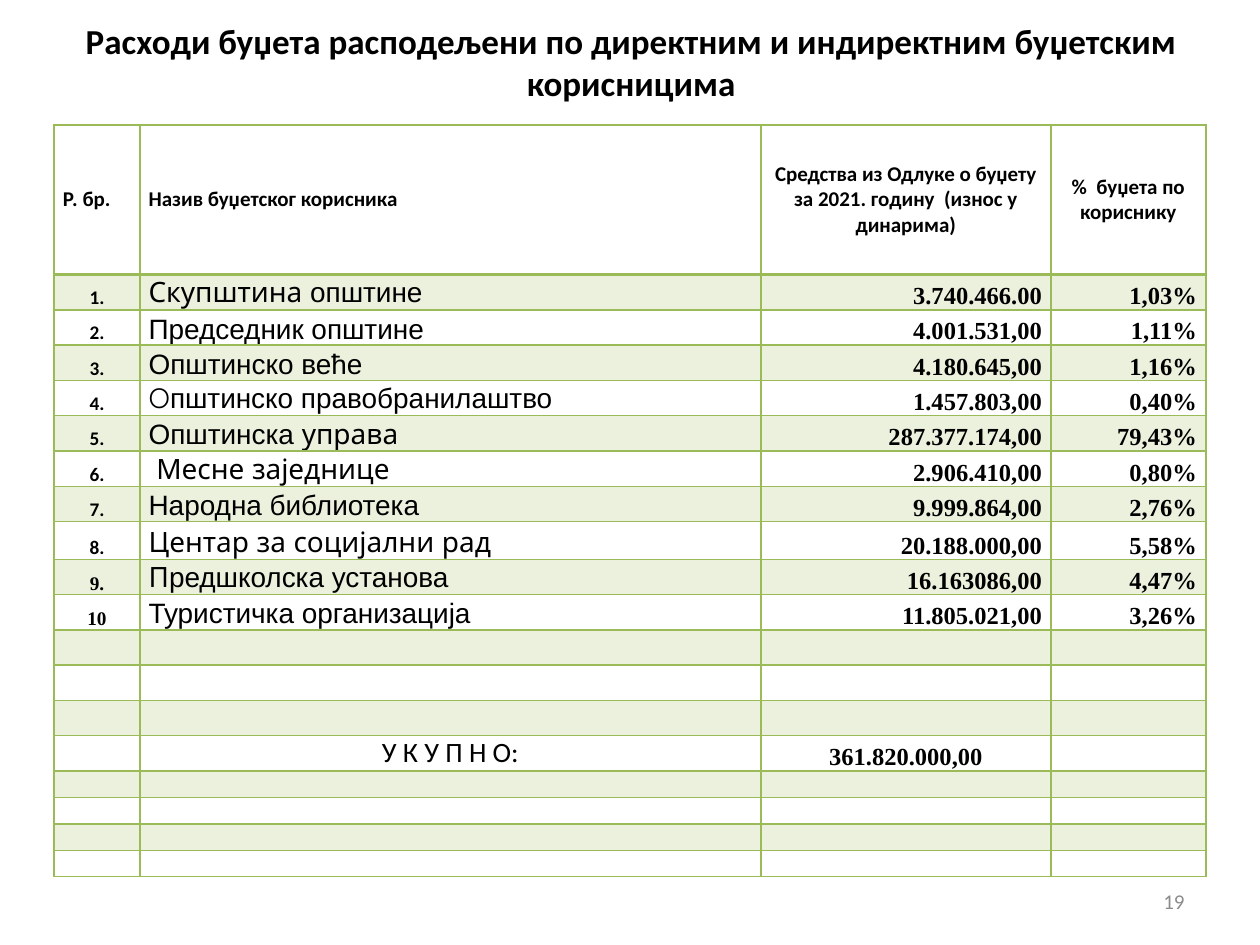
from dataclasses import dataclass

from lxml import etree
from pptx import Presentation
from pptx.dml.color import RGBColor
from pptx.enum.text import MSO_ANCHOR, PP_ALIGN
from pptx.oxml.ns import qn
from pptx.util import Inches, Pt

LEFT, CENTER, RIGHT = PP_ALIGN.LEFT, PP_ALIGN.CENTER, PP_ALIGN.RIGHT
TOP, MIDDLE, BOTTOM = MSO_ANCHOR.TOP, MSO_ANCHOR.MIDDLE, MSO_ANCHOR.BOTTOM

BLACK = RGBColor(0x00, 0x00, 0x00)
GRAY = RGBColor(0x8C, 0x8C, 0x8C)
GREEN = RGBColor(0x9B, 0xBB, 0x59)
BAND_ALPHA = "20000"

CALIBRI, ARIAL = "Calibri", "Arial"
QUICKSAND, TIMES = "Quicksand", "Times New Roman"


@dataclass
class Style:
    size: float
    font: str
    bold: bool = False
    align: int = LEFT
    anchor: int = BOTTOM
    color: RGBColor = BLACK


@dataclass
class User:
    number: str
    name: list  # (text, font) pairs
    amount: str
    share: str
    number_font: str = CALIBRI


HEADERS = [
    ("Р. бр.", LEFT),
    ("Назив буџетског корисника", LEFT),
    ("Средства из Одлуке о буџету за 2021. годину  (износ у динарима)", CENTER),
    ("%  буџета по кориснику", CENTER),
]
USERS = [
    User("1.", [("Скупштина ", QUICKSAND), ("општине", ARIAL)], "3.740.466.00", "1,03%"),
    User("2.", [("Председник општине", ARIAL)], "4.001.531,00", "1,11%"),
    User("3.", [("Општинско веће", ARIAL)], "4.180.645,00", "1,16%"),
    User("4.", [("O", QUICKSAND), ("пштинско правобранилаштво", ARIAL)],
         "1.457.803,00", "0,40%"),
    User("5.", [("Општинска ", ARIAL), ("управа", QUICKSAND)], "287.377.174,00", "79,43%"),
    User("6.", [(" ", ARIAL), ("Месне заједнице", QUICKSAND)], "2.906.410,00", "0,80%"),
    User("7.", [("Народна библиотека", ARIAL)], "9.999.864,00", "2,76%"),
    User("8.", [("Центар за социјални рад", QUICKSAND)], "20.188.000,00", "5,58%"),
    User("9.", [("П", QUICKSAND), ("редшколска установа", ARIAL)],
         "16.163086,00", "4,47%", TIMES),
    User("10", [("Туристичка организација", ARIAL)], "11.805.021,00", "3,26%", TIMES),
]
COL_WIDTHS = [0.68, 4.93, 2.3, 1.23]
ROW_HEIGHTS = [1.19] + [0.28] * 7 + [0.3] + [0.28] * 6 + [0.21] * 4
TOTAL_ROW = 14


def write(p, runs: list, style: Style) -> None:
    """Fill a paragraph with (text, font) runs in one style."""
    p.alignment = style.align
    for text, font in runs:
        r = p.add_run()
        r.text = text
        r.font.size = Pt(style.size)
        r.font.name = font
        r.font.bold = style.bold
        r.font.color.rgb = style.color


def add_text(slide, box: tuple, text: str, style: Style) -> None:
    sp = slide.shapes.add_textbox(*map(Inches, box))
    tf = sp.text_frame
    tf.word_wrap = True
    tf.vertical_anchor = style.anchor
    write(tf.paragraphs[0], [(text, style.font)], style)


def write_cell(cell, text: str, style: Style, runs: list = None) -> None:
    cell.vertical_anchor = style.anchor
    write(cell.text_frame.paragraphs[0], runs or [(text, style.font)], style)


def add_borders(cell, top: float, bottom: float) -> None:
    """Borders come before the fill in the cell properties."""
    props = cell._tc.get_or_add_tcPr()
    widths = {"a:lnL": 1, "a:lnR": 1, "a:lnT": top, "a:lnB": bottom}
    for i, (tag, width) in enumerate(widths.items()):
        ln = etree.Element(qn(tag), w=str(Pt(width)))
        fill = etree.SubElement(ln, qn("a:solidFill"))
        etree.SubElement(fill, qn("a:srgbClr"), val=str(GREEN))
        props.insert(i, ln)


def format_cell(cell, row: int) -> None:
    cell.margin_left = cell.margin_right = Inches(0.07)
    cell.margin_top = cell.margin_bottom = 0
    if row % 2:
        cell.fill.solid()
        cell.fill.fore_color.rgb = GREEN
        color = cell._tc.tcPr.find(".//" + qn("a:srgbClr"))
        etree.SubElement(color, qn("a:alpha"), val=BAND_ALPHA)
    else:
        cell.fill.background()
    add_borders(cell, 2 if row == 1 else 1, 2 if row == 0 else 1)
    if not cell.text_frame.text:
        # Small empty text keeps the row at its set height
        cell.text_frame.paragraphs[0]._p.get_or_add_endParaRPr().set("sz", "1000")


def add_budget_table(slide) -> None:
    frame = slide.shapes.add_table(
        len(ROW_HEIGHTS), len(COL_WIDTHS), Inches(0.43), Inches(0.99),
        Inches(sum(COL_WIDTHS)), Inches(sum(ROW_HEIGHTS)))
    table = frame.table
    for column, width in zip(table.columns, COL_WIDTHS):
        column.width = Inches(width)
    for row, height in zip(table.rows, ROW_HEIGHTS):
        row.height = Inches(height)
    table.first_row = table.horz_banding = False

    # Header
    for col, (text, align) in enumerate(HEADERS):
        write_cell(table.cell(0, col), text, Style(12, CALIBRI, True, align, MIDDLE))

    # Budget users
    name_style = Style(16, ARIAL)
    figure_style = Style(14, TIMES, True, RIGHT)
    for row, user in enumerate(USERS, start=1):
        number_style = Style(11, user.number_font, True, CENTER)
        write_cell(table.cell(row, 0), user.number, number_style)
        write_cell(table.cell(row, 1), "", name_style, user.name)
        write_cell(table.cell(row, 2), user.amount, figure_style)
        write_cell(table.cell(row, 3), user.share, figure_style)

    # Total
    write_cell(table.cell(TOTAL_ROW, 1), "У К У П Н О:",
               Style(16, CALIBRI, False, CENTER, TOP))
    write_cell(table.cell(TOTAL_ROW, 2), "361.820.000,00",
               Style(14, TIMES, True, CENTER))

    for row in range(len(ROW_HEIGHTS)):
        for col in range(len(COL_WIDTHS)):
            format_cell(table.cell(row, col), row)


def main() -> None:
    prs = Presentation()
    prs.slide_width, prs.slide_height = Inches(10), Inches(7.5)
    slide = prs.slides.add_slide(prs.slide_layouts[6])

    add_text(slide, (0.51, 0.13, 9, 0.71),
             "Расходи буџета расподељени по директним и индиректним буџетским корисницима",
             Style(20, CALIBRI, True, CENTER, MIDDLE))
    add_budget_table(slide)
    add_text(slide, (7.17, 6.95, 2.33, 0.4), "19",
             Style(12, CALIBRI, False, RIGHT, MIDDLE, GRAY))

    prs.save("out.pptx")


if __name__ == "__main__":
    main()
